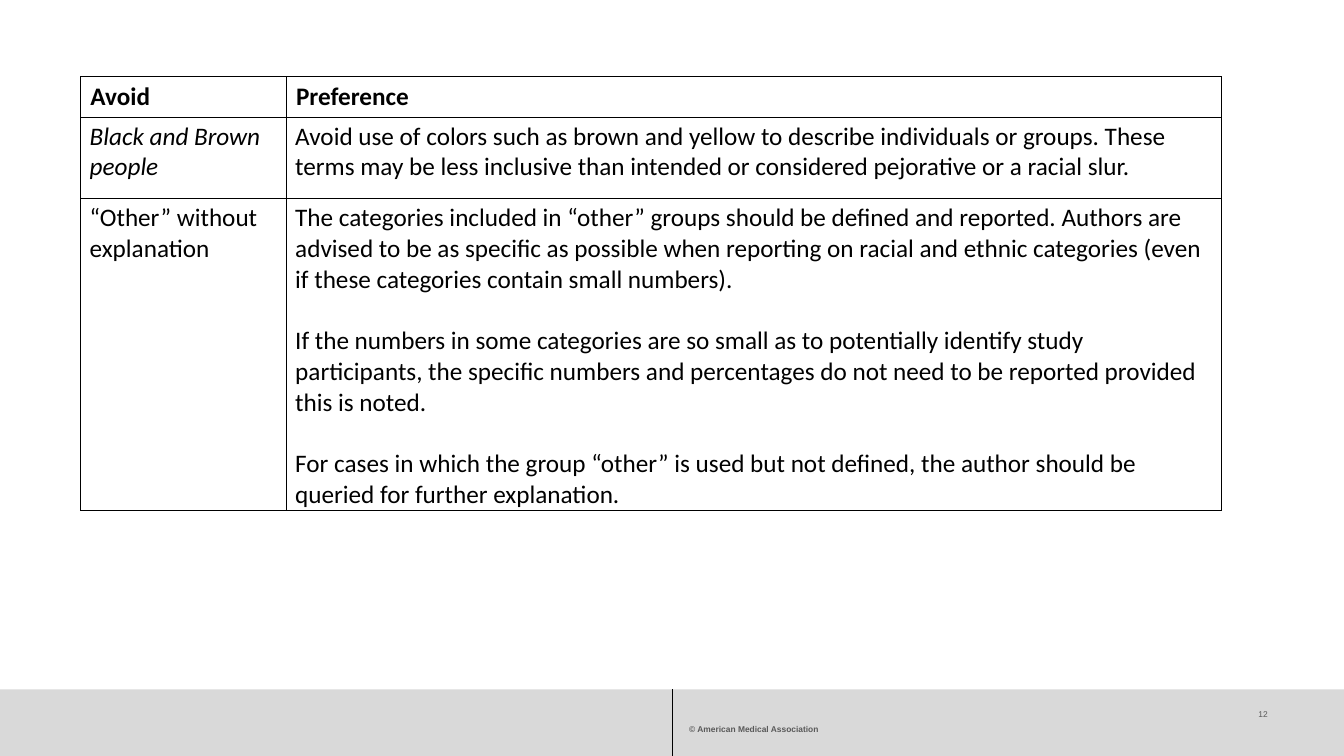
import pptx
import pptx.dml.color
import pptx.enum.shapes
import pptx.enum.text
import pptx.oxml
import pptx.oxml.ns
import pptx.util
from pptx.util import Cm

WIDTH, HEIGHT = 33.87, 19.05
FOOTER_TOP = 17.37
TABLE_LEFT = 2.03
COLUMN_WIDTHS = [5.18, 23.57]

HEADER = [[(["Avoid"], {"bold": True}), (["Preference"], {"bold": True})]]
GUIDANCE = [
    [
        (["Black and Brown people"], {"italic": True}),
        (["Avoid use of colors such as brown and yellow to describe individuals or groups. "
          "These terms may be less inclusive than intended or considered pejorative or a racial slur."], {}),
    ],
    [
        (["“Other” without explanation"], {}),
        (["The categories included in “other” groups should be defined and reported. Authors are "
          "advised to be as specific as possible when reporting on racial and ethnic categories "
          "(even if these categories contain small numbers).",
          "If the numbers in some categories are so small as to potentially identify study "
          "participants, the specific numbers and percentages do not need to be reported provided "
          "this is noted.",
          "For cases in which the group “other” is used but not defined, the author should be "
          "queried for further explanation."], {}),
    ],
]


def color(value):
    return pptx.dml.color.RGBColor.from_string(value)


def write(paragraph, text, font="Calibri", size=18, fill="000000", bold=False,
          italic=False, align="LEFT", before=0):
    run = paragraph.add_run()
    run.text = text
    run.font.name = font
    run.font.size = pptx.util.Pt(size)
    run.font.bold = bold
    run.font.italic = italic
    run.font.color.rgb = color(fill)
    paragraph.alignment = getattr(pptx.enum.text.PP_ALIGN, align)
    paragraph.space_before = pptx.util.Pt(before)


class SlideBuilder:
    ink = "000000"
    band = "D9D9D9"
    footer_font = {"font": "Arial", "size": 6, "fill": "595959"}
    paragraph_gap = 22

    def __init__(self, slide):
        self.slide = slide

    def rectangle(self, left, top, width, height):
        shape = self.slide.shapes.add_shape(
            pptx.enum.shapes.MSO_SHAPE.RECTANGLE, Cm(left), Cm(top), Cm(width), Cm(height))
        shape.shadow.inherit = False
        shape.fill.solid()
        shape.fill.fore_color.rgb = color(self.band)
        shape.line.fill.background()

    def line(self, start_x, start_y, end_x, end_y):
        connector = self.slide.shapes.add_connector(
            pptx.enum.shapes.MSO_CONNECTOR.STRAIGHT,
            Cm(start_x), Cm(start_y), Cm(end_x), Cm(end_y))
        connector.line.color.rgb = color(self.ink)
        connector.line.width = pptx.util.Pt(0.25)
        properties = connector._element.spPr
        properties.append(properties.makeelement(pptx.oxml.ns.qn("a:effectLst"), {}))

    def footer_text(self, left, top, width, height, text, **style):
        frame = self.slide.shapes.add_textbox(
            Cm(left), Cm(top), Cm(width), Cm(height)).text_frame
        frame.word_wrap = True
        frame.margin_left = frame.margin_right = frame.margin_top = frame.margin_bottom = 0
        write(frame.paragraphs[0], text, **self.footer_font, **style)

    def borders(self, cell):
        properties = cell._tc.get_or_add_tcPr()
        for index, side in enumerate(("lnL", "lnR", "lnT", "lnB")):
            properties.insert(index, pptx.oxml.parse_xml(
                f'<a:{side} {pptx.oxml.ns.nsdecls("a")} w="9525"><a:solidFill>'
                f'<a:srgbClr val="{self.ink}"/></a:solidFill></a:{side}>'))

    def table(self, top, row_heights, rows, margin_x, margin_y):
        table = self.slide.shapes.add_table(
            len(rows), len(COLUMN_WIDTHS), Cm(TABLE_LEFT), Cm(top),
            Cm(sum(COLUMN_WIDTHS)), Cm(sum(row_heights))).table
        table.first_row = table.horz_banding = False
        for column, width in zip(table.columns, COLUMN_WIDTHS):
            column.width = Cm(width)
        for row, height, contents in zip(table.rows, row_heights, rows):
            row.height = Cm(height)
            for cell, (texts, style) in zip(row.cells, contents):
                cell.fill.background()
                cell.margin_left = cell.margin_right = Cm(margin_x)
                cell.margin_top = cell.margin_bottom = Cm(margin_y)
                self.borders(cell)
                frame = cell.text_frame
                for index, text in enumerate(texts):
                    paragraph = frame.add_paragraph() if index else frame.paragraphs[0]
                    write(paragraph, text, before=self.paragraph_gap if index else 0, **style)


def main():
    presentation = pptx.Presentation()
    presentation.slide_width = Cm(WIDTH)
    presentation.slide_height = Cm(HEIGHT)
    builder = SlideBuilder(presentation.slides.add_slide(presentation.slide_layouts[6]))
    builder.rectangle(0, FOOTER_TOP, WIDTH, HEIGHT - FOOTER_TOP)
    builder.line(WIDTH / 2, FOOTER_TOP, WIDTH / 2, HEIGHT)
    builder.footer_text(17.37, 18.24, 11.43, 0.25, "© American Medical Association", bold=True)
    builder.footer_text(30.05, 17.86, 1.9, 1.02, "12", align="RIGHT")
    builder.table(2.95, [2.06, 7.85], GUIDANCE, 0.23, 0.1)
    builder.table(1.93, [1.02], HEADER, 0.25, 0.13)
    presentation.save("out.pptx")


if __name__ == "__main__":
    main()
